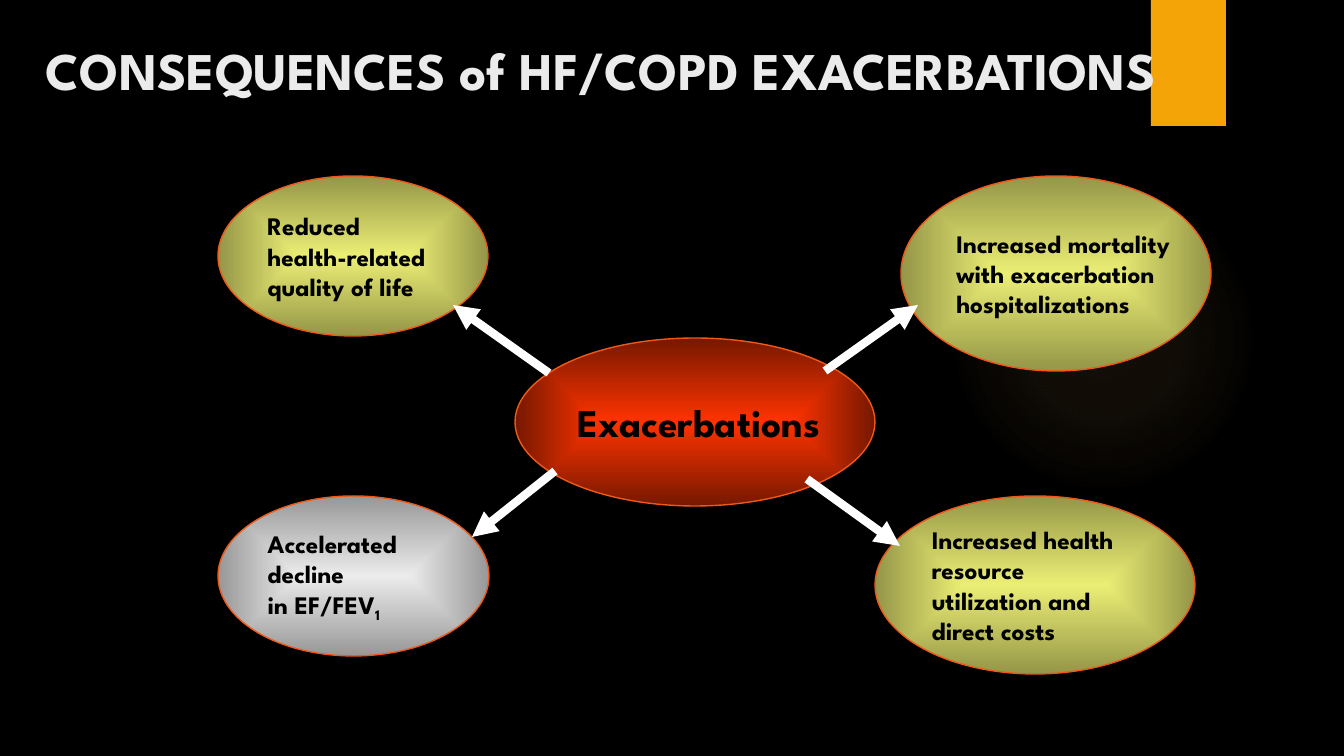
from lxml import etree
from pptx import Presentation
from pptx.dml.color import RGBColor
from pptx.enum.shapes import MSO_CONNECTOR, MSO_SHAPE
from pptx.enum.text import MSO_ANCHOR, PP_ALIGN
from pptx.oxml import parse_xml
from pptx.oxml.ns import qn
from pptx.util import Emu, Pt

OVAL, RECT = MSO_SHAPE.OVAL, MSO_SHAPE.RECTANGLE
LINE = MSO_CONNECTOR.STRAIGHT
TOP, MIDDLE = MSO_ANCHOR.TOP, MSO_ANCHOR.MIDDLE
LEFT = PP_ALIGN.LEFT
NS = "http://schemas.openxmlformats.org/drawingml/2006/main"

# Content: boxes are left, top, width, height in px
TITLE = ("CONSEQUENCES of HF/COPD EXACERBATIONS", (36, 33, 1307, 107))
TAB = (1151, 0, 75, 126)
GLOW = (949, 184, 310, 310)
SUB = "1"
OVALS = [
    ("red", "hub", (515, 338, 360, 168), ["Exacerbations"]),
    ("lime", "body", (901, 176, 310, 195),
     ["Increased mortality", "with exacerbation", "hospitalizations"]),
    ("lime", "body", (875, 496, 320, 178),
     ["Increased health", "resource", "utilization and", "direct costs"]),
    ("lime", "body", (218, 176, 270, 160),
     ["Reduced", "health-related", "quality of life"]),
    ("gray", "body", (218, 496, 271, 160),
     ["Accelerated", "decline", "in EF/FEV"]),
]
ARROWS = [
    ((555, 471), (472, 537)),
    ((825, 371), (918, 305)),
    ((807, 479), (900, 546)),
    ((549, 373), (453, 305)),
]

THEME = {
    "font": "League Spartan",
    "size": {"title": 37.8, "hub": 28, "body": 18},
    "back": "000000", "title": "EBEBEB", "ink": "000000",
    "tab": "F5A408", "rim": "EE5818", "arrow": "FFFFFF",
    # Gradient stops: position %, colour, opacity %
    "red": [(0, "FF3300", 100), (100, "761800", 100)],
    "lime": [(0, "EBEE74", 100), (100, "959648", 100)],
    "gray": [(0, "EBEBEB", 100), (100, "989898", 100)],
    "glow": [(0, "FAC96A", 7), (36, "FAC96A", 6), (69, "FAC96A", 0)],
}


def px(n):
    return Emu(round(n * 914400 / 100.8))


def color(name):
    return RGBColor.from_string(THEME[name])


def shade(shape, name, kind):
    """Fill a shape with a gradient that runs out from its centre."""
    stops = "".join(
        f'<a:gs pos="{pos * 1000}"><a:srgbClr val="{rgb}">'
        f'<a:alpha val="{alpha * 1000}"/></a:srgbClr></a:gs>'
        for pos, rgb, alpha in THEME[name])
    grad = parse_xml(
        f'<a:gradFill xmlns:a="{NS}" rotWithShape="1"><a:gsLst>{stops}</a:gsLst>'
        f'<a:path path="{kind}"><a:fillToRect l="50000" t="50000" '
        f'r="50000" b="50000"/></a:path></a:gradFill>')
    shape.fill.background()
    props = shape.element.spPr
    props.replace(props.find(qn("a:noFill")), grad)


def add_form(slide, kind, box):
    shape = slide.shapes.add_shape(kind, *map(px, box))
    shape.shadow.inherit = False
    shape.line.fill.background()
    return shape


def style(run, size, ink):
    font = run.font
    font.name, font.bold = THEME["font"], True
    font.size = Pt(THEME["size"][size])
    font.color.rgb = color(ink)


def write(shape, lines, size, ink, anchor, wrap):
    frame = shape.text_frame
    frame.text = "\n".join(lines)
    frame.word_wrap, frame.vertical_anchor = wrap, anchor
    for para in frame.paragraphs:
        para.alignment = LEFT
        for run in para.runs:
            style(run, size, ink)
    return frame


def add_oval(slide, fill, size, box, lines):
    oval = add_form(slide, OVAL, box)
    shade(oval, fill, "shape")
    oval.line.color.rgb = color("rim")
    oval.line.width = Pt(1)
    return write(oval, lines, size, "ink", MIDDLE, False)


def add_arrow(slide, start, end):
    arrow = slide.shapes.add_connector(LINE, *map(px, start + end))
    arrow.line.color.rgb = color("arrow")
    arrow.line.width = Pt(6)
    etree.SubElement(arrow.line._get_or_add_ln(), qn("a:tailEnd"), type="triangle")
    etree.SubElement(arrow.element.spPr, qn("a:effectLst"))


def main():
    deck = Presentation()
    deck.slide_width, deck.slide_height = px(1344), px(756)
    slide = deck.slides.add_slide(deck.slide_layouts[6])
    slide.background.fill.solid()
    slide.background.fill.fore_color.rgb = color("back")

    shade(add_form(slide, OVAL, GLOW), "glow", "circle")
    tab = add_form(slide, RECT, TAB)
    tab.fill.solid()
    tab.fill.fore_color.rgb = color("tab")

    text, box = TITLE
    title = slide.shapes.add_textbox(*map(px, box))
    write(title, [text], "title", "title", TOP, True)

    for oval in OVALS:
        frame = add_oval(slide, *oval)
    # The last oval ends in a subscript
    run = frame.paragraphs[-1].add_run()
    run.text = SUB
    style(run, "body", "ink")
    run.font._element.set("baseline", "-25000")

    for start, end in ARROWS:
        add_arrow(slide, start, end)
    deck.save("out.pptx")


if __name__ == "__main__":
    main()
